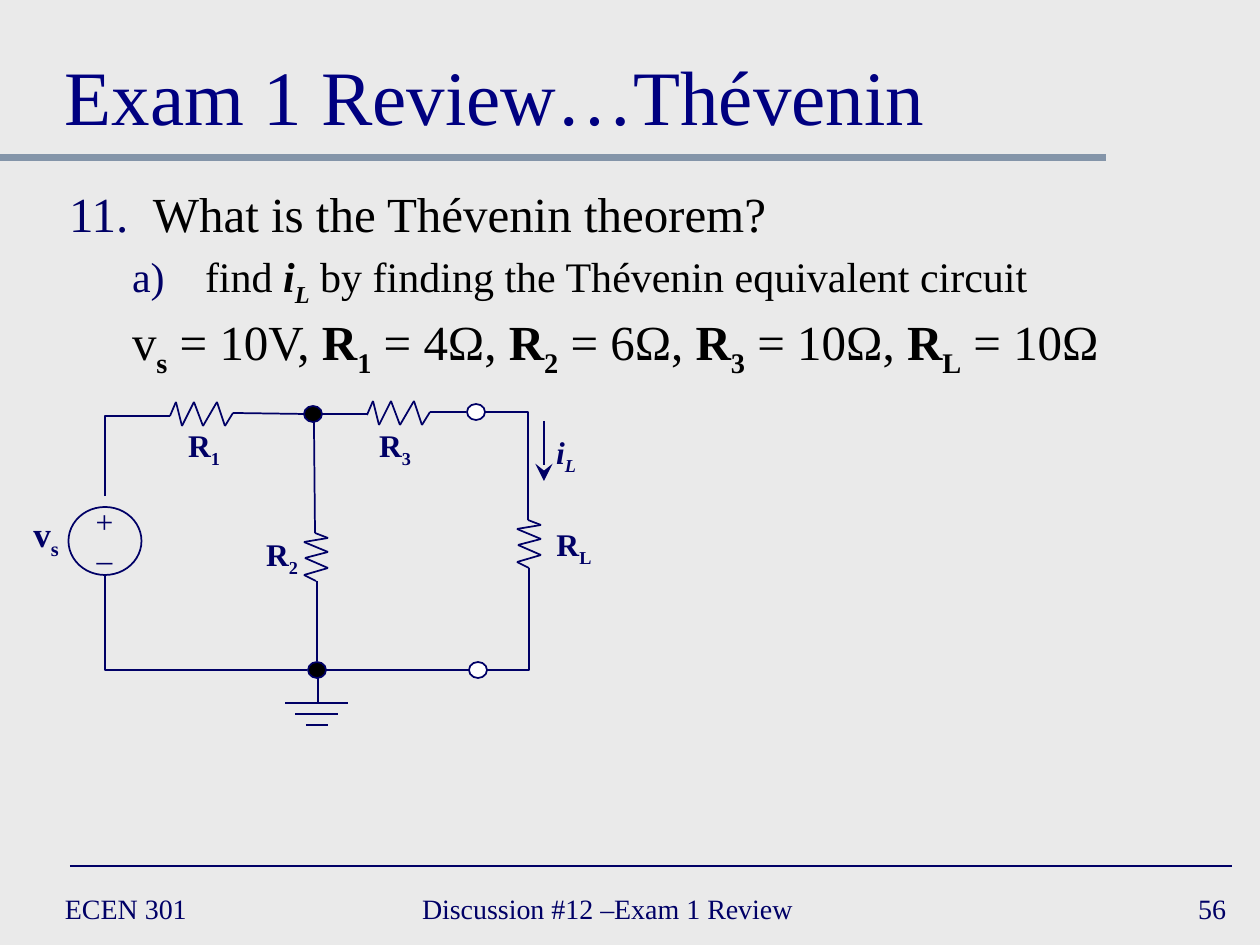
from itertools import pairwise

from pptx import Presentation
from pptx import util as u
from pptx.dml.color import RGBColor
from pptx.enum import shapes, text
from pptx.oxml import ns
from lxml import etree

PX = 914400 / 126
THEME = {
    "font": "Times New Roman",
    "paper": "EAEAEA", "ink": "000066", "title": "000080", "body": "000000",
    "bar": "8495A9", "node": "000000", "terminal": "FFFFFF",
    "title_size": 44, "question": 28, "part": 24, "source": 20, "label": 18, "footer": 16,
}

# Content: a run is (text, style); b bold, i italic, s subscript
TITLE = [("Exam 1 Review…Thévenin", "")]
QUESTION = [("What is the Thévenin theorem?", "")]
PART = [("find ", ""), ("i", "bi"), ("L", "bis"),
        (" by finding the Thévenin equivalent circuit", "")]
VALUES = [("v", ""), ("s", "bs"), (" = 10V, ", ""), ("R", "b"), ("1", "bs"),
          (" = 4Ω, ", ""), ("R", "b"), ("2", "bs"), (" = 6Ω, ", ""), ("R", "b"),
          ("3", "bs"), (" = 10Ω, ", ""), ("R", "b"), ("L", "bs"), (" = 10Ω", "")]
FOOTERS = [("ECEN 301", 53, 273, "LEFT"),
           ("Discussion #12 –Exam 1 Review", 410, 482, "LEFT"),
           ("56", 976, 262, "RIGHT")]

# Circuit: (name, subscript, style, size, centre x, top)
LABELS = [("R", "1", "b", "label", 204, 420), ("R", "3", "b", "label", 395, 420),
          ("R", "2", "b", "label", 282, 529), ("R", "L", "b", "label", 574, 519),
          ("v", "s", "b", "source", 46, 507), ("i", "L", "bi", "label", 566, 427)]
ACROSS = [(0, 0), (6, -14), (12, 10), (24, -14), (33, 10), (47, -14), (55, 10), (63, -3)]
DOWN = [(0, 0), (13, 5), (-11, 9), (13, 19), (-10, 25), (13, 35), (-11, 42), (1, 48)]
RESISTORS = [(ACROSS, 170, 416), (ACROSS, 367, 415), (DOWN, 315, 533), (DOWN, 528, 520)]
BENT_WIRES = [[(105, 496), (105, 416), (170, 416)],
              [(307, 670), (105, 670), (105, 575)],
              [(485, 412), (528, 412), (528, 520)],
              [(487, 670), (529, 670), (529, 568)]]
WIRES = [(233, 413, 304, 414), (322, 414, 367, 414), (430, 412, 466, 412),
         (314, 422, 315, 533), (317, 581, 317, 661), (326, 670, 469, 670),
         (318, 670, 318, 702)]
GROUND = {"x": 317, "top": 703, "gap": 11, "widths": [63, 43, 22]}
DOTS = [(313, 414, "node"), (317, 670, "node"),
        (476, 412, "terminal"), (478, 670, "terminal")]

presentation = Presentation()
presentation.slide_width, presentation.slide_height = u.Inches(10), u.Inches(7.5)
slide = presentation.slides.add_slide(presentation.slide_layouts[6])


def px(*values):
    return [u.Emu(round(value * PX)) for value in values]


def color(name):
    return RGBColor.from_string(THEME[name])


def add_element(parent, tag, **attributes):
    element = etree.SubElement(parent, ns.qn(tag))
    for key, value in attributes.items():
        element.set(key, str(value))
    return element


def add_text(paragraphs, left, top, width, height, *, size="label", ink="ink",
             align="LEFT", anchor="TOP", side=12):
    """Each paragraph is a list of runs, or a dict with runs and its own format."""
    frame = slide.shapes.add_textbox(*px(left, top, width, height)).text_frame
    frame.word_wrap = True
    frame.vertical_anchor = text.MSO_ANCHOR[anchor]
    frame.margin_left = frame.margin_right = px(side)[0]
    frame.margin_top = frame.margin_bottom = px(6)[0]
    for index, entry in enumerate(paragraphs):
        form = entry if isinstance(entry, dict) else {"runs": entry}
        paragraph = frame.paragraphs[0] if index == 0 else frame.add_paragraph()
        paragraph.alignment = text.PP_ALIGN[align]
        if "line" in form:
            paragraph.line_spacing = form["line"]
        if index:
            paragraph.space_before = u.Pt(form.get("before", 0))
        properties = paragraph._p.get_or_add_pPr()
        if "indent" in form:
            margin, hang = px(*form["indent"])
            properties.set("marL", str(margin))
            properties.set("indent", str(-hang))
        if "number" in form:
            add_element(add_element(properties, "a:buClr"), "a:srgbClr", val=THEME["ink"])
            add_element(properties, "a:buAutoNum", **form["number"])
        for words, style in form["runs"]:
            run = paragraph.add_run()
            run.text = words
            run.font.name = THEME["font"]
            run.font.size = u.Pt(THEME[form.get("size", size)])
            run.font.color.rgb = color(ink)
            run.font.bold, run.font.italic = "b" in style, "i" in style
            if "s" in style:
                run._r.get_or_add_rPr().set("baseline", "-25000")


def add_line(x1, y1, x2, y2, ink="ink", weight=1):
    line = slide.shapes.add_connector(shapes.MSO_CONNECTOR.STRAIGHT, *px(x1, y1, x2, y2))
    line.line.color.rgb, line.line.width = color(ink), u.Pt(weight)
    add_element(line._element.spPr, "a:effectLst")
    return line


def outline(shape, fill=None):
    shape.shadow.inherit = False
    shape.line.color.rgb, shape.line.width = color("ink"), u.Pt(1)
    if fill:
        shape.fill.solid()
        shape.fill.fore_color.rgb = color(fill)
    else:
        shape.fill.background()


def add_path(points):
    builder = slide.shapes.build_freeform(*points[0], scale=PX)
    builder.add_line_segments(points[1:], close=False)
    outline(builder.convert_to_shape())


def add_circle(x, y, width, height, fill=None):
    box = px(x - width / 2, y - height / 2, width, height)
    outline(slide.shapes.add_shape(shapes.MSO_SHAPE.OVAL, *box), fill)


# Background, rules and footers
slide.background.fill.solid()
slide.background.fill.fore_color.rgb = color("paper")
add_line(0, 157.5, 1106, 157.5, ink="bar", weight=4)
add_line(70, 866, 1232, 866)
for words, left, width, align in FOOTERS:
    add_text([[(words, "")]], left, 882, width, 53, size="footer", align=align, anchor="MIDDLE")

# Title and question
add_text([TITLE], 53, 21, 1155, 126, size="title_size", ink="title", anchor="BOTTOM")
add_text([
    {"runs": QUESTION, "line": 0.9, "indent": (84, 84),
     "number": {"type": "arabicPeriod", "startAt": 11}},
    {"runs": PART, "size": "part", "line": 0.9, "before": 4.8, "indent": (136, 73),
     "number": {"type": "alphaLcParenR"}},
    {"runs": VALUES, "line": 0.9, "before": 5.6, "indent": (136, 73)},
], 57, 184, 1152, 194, size="question", ink="body")

# Wires, resistors and ground
for points in BENT_WIRES:
    add_path(points)
for wire in WIRES:
    add_line(*wire)
for zigzag, x, y in RESISTORS:
    for (x1, y1), (x2, y2) in pairwise(zigzag):
        add_line(x + x1, y + y1, x + x2, y + y2)
for row, width in enumerate(GROUND["widths"]):
    y = GROUND["top"] + row * GROUND["gap"]
    add_line(GROUND["x"] - width / 2, y, GROUND["x"] + width / 2, y)

# Nodes, terminals and voltage source
for x, y, fill in DOTS:
    add_circle(x, y, 18, 16, fill)
add_circle(105, 541, 73, 68)
add_text([[("+", "")], [("–", "")]], 83, 496, 43, 88, align="CENTER", side=0)

# Load current arrow and labels
arrow = add_line(544, 421, 544, 481)
add_element(arrow.line._get_or_add_ln(), "a:tailEnd", type="stealth", w="lg", len="lg")
for name, subscript, style, size, x, top in LABELS:
    add_text([[(name, style), (subscript, style + "s")]],
             x - 30, top, 60, 50, size=size, align="CENTER", side=0)

presentation.save("out.pptx")
